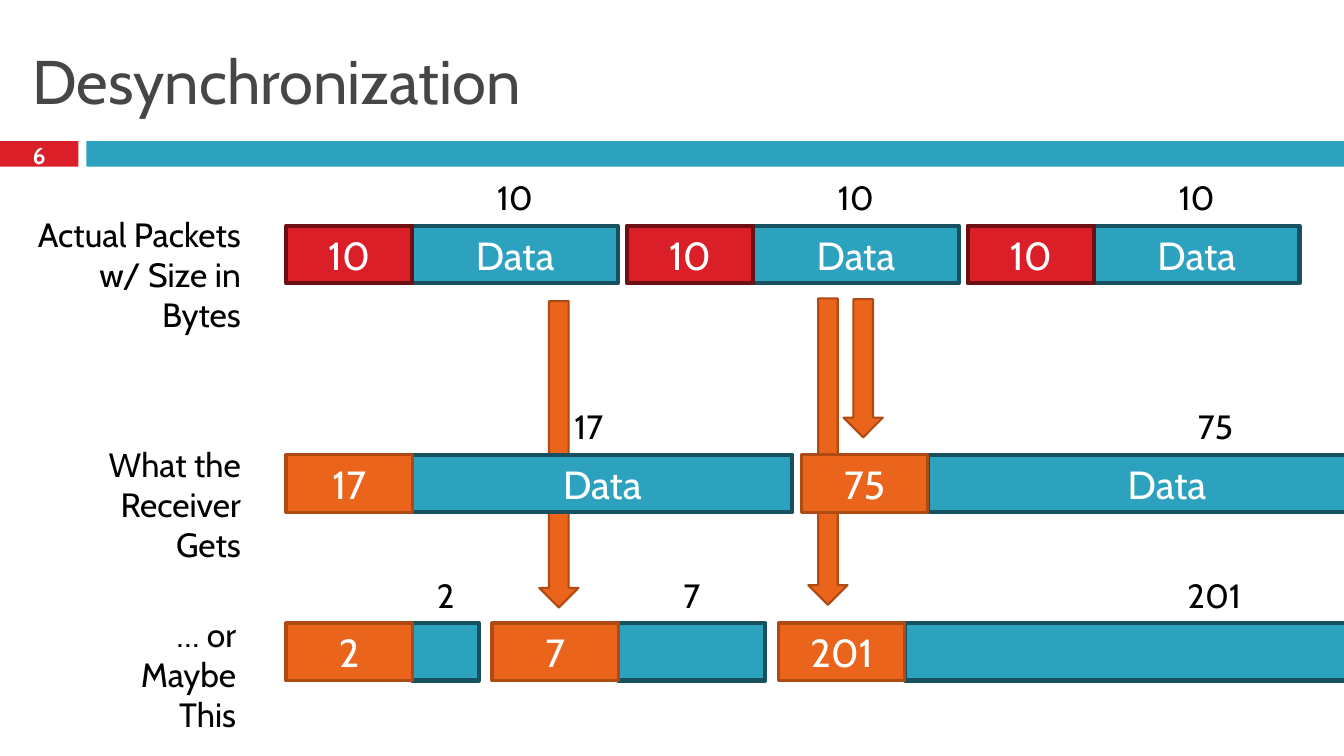
from pptx import Presentation
from pptx.dml.color import RGBColor
from pptx.enum.shapes import MSO_SHAPE
from pptx.enum.text import MSO_ANCHOR, PP_ALIGN
from pptx.util import Cm, Pt

FONT = "Cabin"
TEAL, RED, ORANGE = ("2DA2BF", "175160"), ("DA1F28", "6D1014"), ("EB641B", "AE4A14")
START, HEAD, HIGH, RISE = 7.21, 3.18, 1.45, 1.35

ARROWS = [(13.59, 7.59, 7.72), (20.37, 7.52, 7.72), (21.26, 7.54, 3.48)]
ROWS = [
    dict(top=5.69, gap=0.23, tone=RED, edge=3, word="Data",
         packs=[("10", 5.18, 0)] * 3),
    dict(top=11.46, gap=0.23, tone=ORANGE, edge=2.25, word="Data",
         packs=[("17", 9.58, -0.34), ("75", 12.06, 1.22)]),
    dict(top=15.7, gap=0.33, tone=ORANGE, edge=2.25, word="",
         packs=[("2", 1.68, 0), ("7", 3.71, 0), ("201", 12.62, 1.49)]),
]
NOTES = [
    (0.33, 5.26, 5.99, ["Actual Packets", "w/ Size in Bytes"]),
    (1.12, 11.05, 5.2, ["What the", "Receiver Gets"]),
    (1.78, 15.34, 4.42, ["… or", "Maybe This"]),
]


def color(code):
    return RGBColor.from_string(code)


def write(shape, lines, size=24, ink="000000", align=PP_ALIGN.CENTER,
          anchor=MSO_ANCHOR.MIDDLE, bold=False, wrap=True):
    frame = shape.text_frame
    frame.word_wrap = wrap
    frame.vertical_anchor = anchor
    for i, line in enumerate(lines):
        para = frame.add_paragraph() if i else frame.paragraphs[0]
        para.alignment = align
        run = para.add_run()
        run.text = line
        font = run.font
        font.name, font.size, font.bold = FONT, Pt(size), bold
        font.color.rgb = color(ink)


def label(slide, x, y, w, h, lines, **form):
    write(slide.shapes.add_textbox(Cm(x), Cm(y), Cm(w), Cm(h)), lines, **form)


def block(slide, x, y, w, h, tone, edge=0, word="", kind=MSO_SHAPE.RECTANGLE):
    shape = slide.shapes.add_shape(kind, Cm(x), Cm(y), Cm(w), Cm(h))
    shape.shadow.inherit = False
    fill, line = tone
    shape.fill.solid()
    shape.fill.fore_color.rgb = color(fill)
    if edge:
        shape.line.color.rgb = color(line)
        shape.line.width = Pt(edge)
    else:
        shape.line.fill.background()
    if word:
        write(shape, [word], size=28, ink="FFFFFF", wrap=False)


def draw_row(slide, top, gap, tone, edge, word, packs):
    x = START
    for size, width, shift in packs:
        data = x + HEAD
        block(slide, data, top, width, HIGH, TEAL, 3, word)
        block(slide, x, top, HEAD, HIGH, tone, edge, size)
        label(slide, data + width / 2 + shift - 1, top - RISE, 2, 1.27, [size],
              anchor=MSO_ANCHOR.TOP, wrap=False)
        x = data + width + gap


def main():
    """Build the packet desynchronization slide."""
    deck = Presentation()
    deck.slide_width, deck.slide_height = Cm(33.87), Cm(19.05)
    slide = deck.slides.add_slide(deck.slide_layouts[6])
    block(slide, 0, 3.56, 1.98, 0.64, RED)
    block(slide, 2.18, 3.56, 31.69, 0.64, TEAL)
    label(slide, 0.56, 0.64, 32.74, 2.74, ["Desynchronization"], size=44,
          ink="464646", align=PP_ALIGN.LEFT)
    label(slide, 0, 3.48, 1.98, 0.84, ["6"], size=16.6, ink="FFFFFF", bold=True)
    for x, y, h in ARROWS:
        block(slide, x, y, 0.99, h, ORANGE, 1.5, kind=MSO_SHAPE.DOWN_ARROW)
    for row in ROWS:
        draw_row(slide, **row)
    for x, y, w, lines in NOTES:
        label(slide, x, y, w, 2.31, lines, align=PP_ALIGN.RIGHT, anchor=MSO_ANCHOR.TOP)
    deck.save("out.pptx")


if __name__ == "__main__":
    main()
